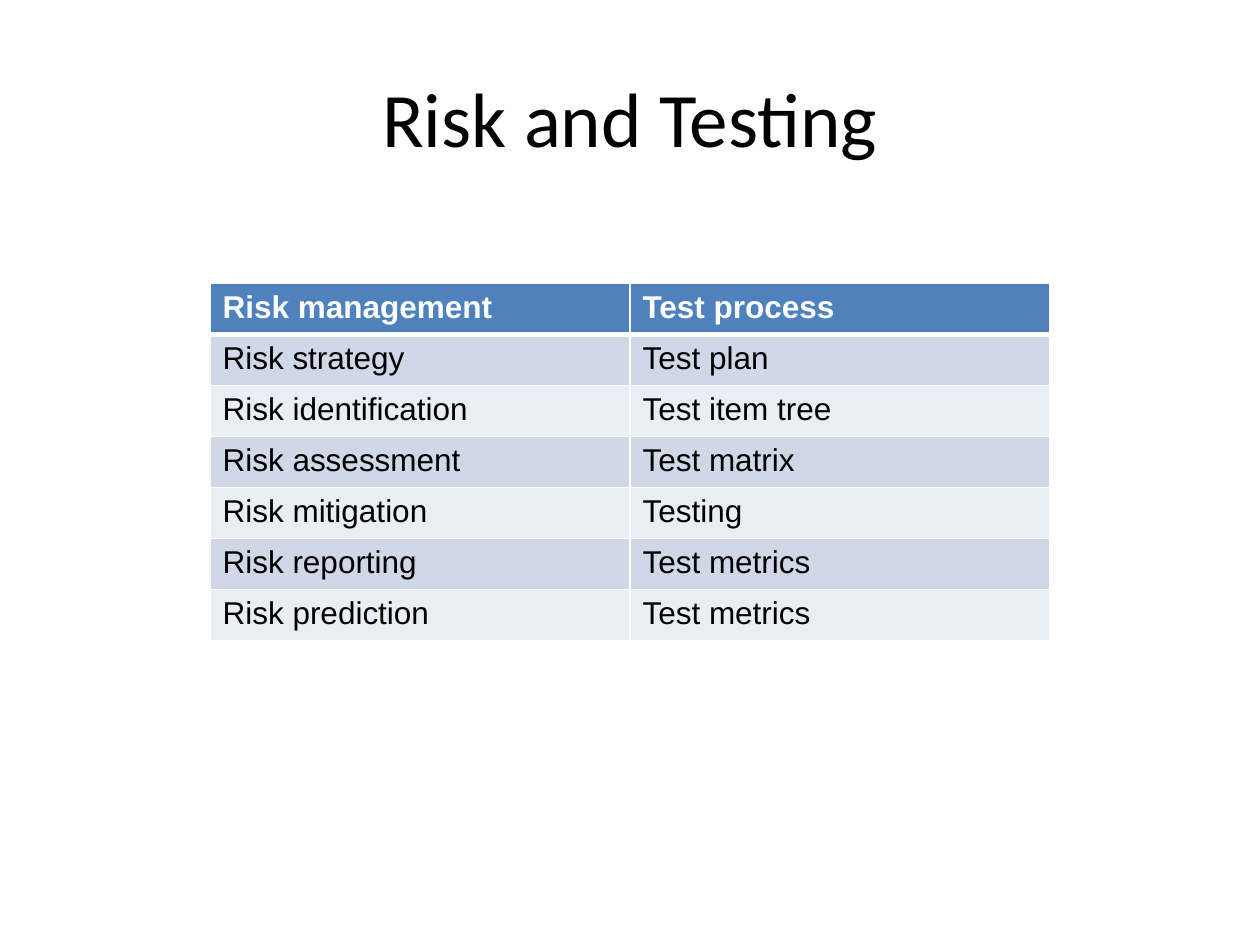
from lxml.etree import SubElement
from pptx import Presentation
from pptx.dml.color import RGBColor
from pptx.enum.text import MSO_ANCHOR, PP_ALIGN
from pptx.oxml.ns import qn
from pptx.util import Inches, Pt

GRID_COLUMNS = 12

TITLE = "Risk and Testing"
RISK_TO_TEST = [
    ("Risk management", "Test process"),
    ("Risk strategy", "Test plan"),
    ("Risk identification", "Test item tree"),
    ("Risk assessment", "Test matrix"),
    ("Risk mitigation", "Testing"),
    ("Risk reporting", "Test metrics"),
    ("Risk prediction", "Test metrics"),
]


def color(hex_value):
    return RGBColor.from_string(hex_value)


class SlideBuilder:
    """Holds the style and the current slide."""

    TITLE_FORMAT = {"name": "Calibri", "size": Pt(44), "bold": False}
    HEADER_FORMAT = {"name": "Arial", "size": Pt(18), "bold": True}
    BODY_FORMAT = {**HEADER_FORMAT, "bold": False}
    TEXT, INVERSE, RULE = "000000", "FFFFFF", "FFFFFF"
    HEADER_FILL, BAND_FILLS = "4F81BD", ("D0D8E8", "E9EDF4")

    def __init__(self, presentation):
        self.width = presentation.slide_width
        self.height = presentation.slide_height
        self.slide = presentation.slides.add_slide(presentation.slide_layouts[5])

    def columns(self, count):
        return round(self.width * count / GRID_COLUMNS)

    def rows(self, share):
        return round(self.height * share)

    def format_text(self, paragraph, values, hex_value):
        for attribute, value in values.items():
            setattr(paragraph.font, attribute, value)
        paragraph.font.color.rgb = color(hex_value)

    def title(self, text, left, top, width, height):
        heading = self.slide.shapes.title
        heading.left, heading.top = self.columns(left), self.rows(top)
        heading.width, heading.height = self.columns(width), self.rows(height)
        frame = heading.text_frame
        frame.text = text
        frame.vertical_anchor = MSO_ANCHOR.MIDDLE
        frame.paragraphs[0].alignment = PP_ALIGN.CENTER
        self.format_text(frame.paragraphs[0], self.TITLE_FORMAT, self.TEXT)

    def borders(self, cell, widths):
        properties = cell._tc.get_or_add_tcPr()
        for side, points in widths.items():
            line = SubElement(properties, qn(f"a:ln{side}"), w=str(Pt(points)))
            fill = SubElement(line, qn("a:solidFill"))
            SubElement(fill, qn("a:srgbClr"), val=self.RULE)

    def table(self, records, left, top, width, row_height):
        table = self.slide.shapes.add_table(
            len(records), len(records[0]), self.columns(left), self.rows(top),
            self.columns(width), self.rows(row_height * len(records))).table
        for row_index, record in enumerate(records):
            is_header = row_index == 0
            fill = self.HEADER_FILL if is_header else self.BAND_FILLS[(row_index - 1) % 2]
            # The rule between header and body is the heavy one
            widths = {"L": 1, "R": 1, "T": 3 if row_index == 1 else 1,
                      "B": 3 if is_header else 1}
            for column_index, text in enumerate(record):
                cell = table.cell(row_index, column_index)
                cell.text = text
                self.borders(cell, widths)
                cell.fill.solid()
                cell.fill.fore_color.rgb = color(fill)
                self.format_text(
                    cell.text_frame.paragraphs[0],
                    self.HEADER_FORMAT if is_header else self.BODY_FORMAT,
                    self.INVERSE if is_header else self.TEXT)


def main():
    presentation = Presentation()
    presentation.slide_width, presentation.slide_height = Inches(10), Inches(7.5)
    builder = SlideBuilder(presentation)

    # Heading
    builder.title(TITLE, left=0.6, top=0.04, width=10.8, height=1 / 6)

    # Risk management steps beside their test process counterparts
    builder.table(RISK_TO_TEST, left=2, top=0.3, width=8, row_height=0.054)

    presentation.save("out.pptx")


if __name__ == "__main__":
    main()
